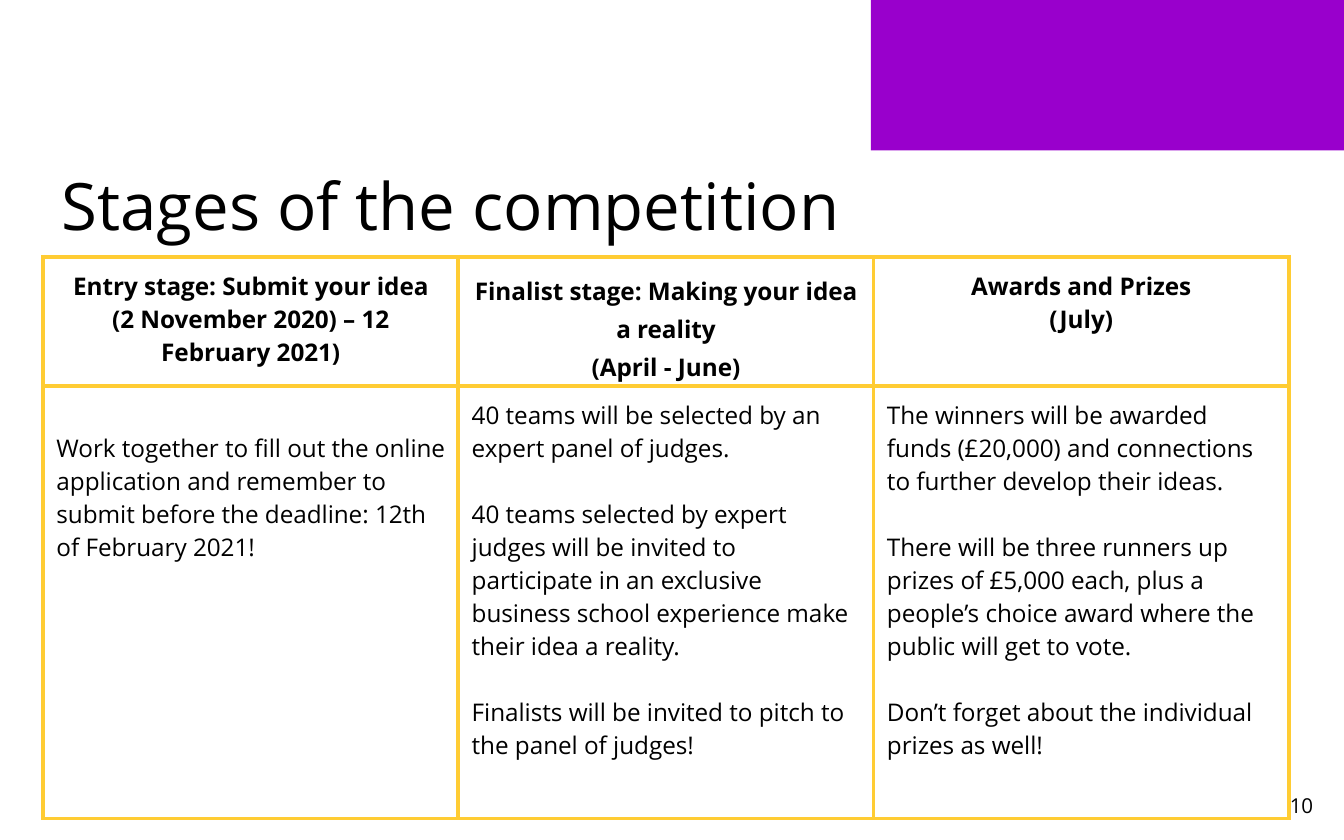
"""Build the slide on the stages of the competition."""
from lxml import etree
from pptx import Presentation
from pptx.dml.color import RGBColor
from pptx.enum.shapes import MSO_SHAPE
from pptx.enum.text import MSO_ANCHOR, PP_ALIGN
from pptx.oxml.ns import qn
from pptx.util import Inches, Pt

FONT = "Open Sans"
BLACK = RGBColor(0x00, 0x00, 0x00)
PURPLE = RGBColor(0x99, 0x00, 0xCC)
YELLOW = RGBColor(0xFF, 0xCC, 0x33)
INSET = Inches(0.1)
LINE = 17.7


def write(tf, *texts, size=13, bold=False, align=PP_ALIGN.LEFT, gap=0, spacing=1.0):
    tf.word_wrap = True
    tf.margin_left = tf.margin_right = tf.margin_top = tf.margin_bottom = INSET
    for i, text in enumerate(texts):
        p = tf.paragraphs[0] if i == 0 else tf.add_paragraph()
        p.alignment = align
        p.line_spacing = spacing
        p.space_before = Pt(gap if i else 0)
        r = p.add_run()
        r.text = text
        r.font.name = FONT
        r.font.size = Pt(size)
        r.font.bold = bold
        r.font.color.rgb = BLACK


def set_borders(cell, color, width):
    tcPr = cell._tc.get_or_add_tcPr()
    for i, side in enumerate(("a:lnL", "a:lnR", "a:lnT", "a:lnB")):
        ln = etree.Element(qn(side), w=str(Pt(width)))
        fill = etree.SubElement(ln, qn("a:solidFill"))
        etree.SubElement(fill, qn("a:srgbClr"), val=str(color))
        tcPr.insert(i, ln)


prs = Presentation()
prs.slide_width = Inches(10)
prs.slide_height = Inches(6.25)
s = prs.slides.add_slide(prs.slide_layouts[6])

banner = s.shapes.add_shape(MSO_SHAPE.RECTANGLE, Inches(6.48), Inches(-0.01), Inches(3.52), Inches(1.13))
banner.shadow.inherit = False
banner.fill.solid()
banner.fill.fore_color.rgb = PURPLE
banner.line.fill.background()

number = s.shapes.add_textbox(Inches(9.27), Inches(5.75), Inches(0.6), Inches(0.48))
number.text_frame.vertical_anchor = MSO_ANCHOR.MIDDLE
write(number.text_frame, "10", size=11, align=PP_ALIGN.RIGHT)

title = s.shapes.add_textbox(Inches(0.36), Inches(1.13), Inches(9.17), Inches(1.67))
write(title.text_frame, "Stages of the competition", size=35)

stages = [
    (("Entry stage: Submit your idea", "(2 November 2020) – 12 February 2021)"),
     ("Work together to fill out the online application and remember to submit before the deadline: "
      "12th of February 2021!",)),
    (("Finalist stage: Making your idea a reality", "(April - June)"),
     ("40 teams will be selected by an expert panel of judges.",
      "40 teams selected by expert judges will be invited to participate in an exclusive business "
      "school experience make their idea a reality.",
      "Finalists will be invited to pitch to the panel of judges!")),
    (("Awards and Prizes", "(July)"),
     ("The winners will be awarded funds (£20,000) and connections to further develop their ideas.",
      "There will be three runners up prizes of £5,000 each, plus a people’s choice award where the "
      "public will get to vote.",
      "Don’t forget about the individual prizes as well!")),
]

frame = s.shapes.add_table(2, len(stages), Inches(0.32), Inches(1.91), Inches(9.27), Inches(4.18))
table = frame.table
table.first_row = False
table.horz_banding = False
for row, height in zip(table.rows, (0.96, 3.22)):
    row.height = Inches(height)

for col, (heading, body) in enumerate(stages):
    table.columns[col].width = Inches(3.09)
    head, detail = table.cell(0, col), table.cell(1, col)
    write(head.text_frame, *heading, bold=True, align=PP_ALIGN.CENTER, spacing=1.15 if col == 1 else 1.0)
    write(detail.text_frame, *body, gap=LINE)
    for cell in (head, detail):
        cell.margin_left = cell.margin_right = cell.margin_top = cell.margin_bottom = INSET
        cell.fill.background()
        set_borders(cell, YELLOW, 2.25)
table.cell(1, 0).margin_top = INSET + Pt(LINE)

prs.save("out.pptx")
